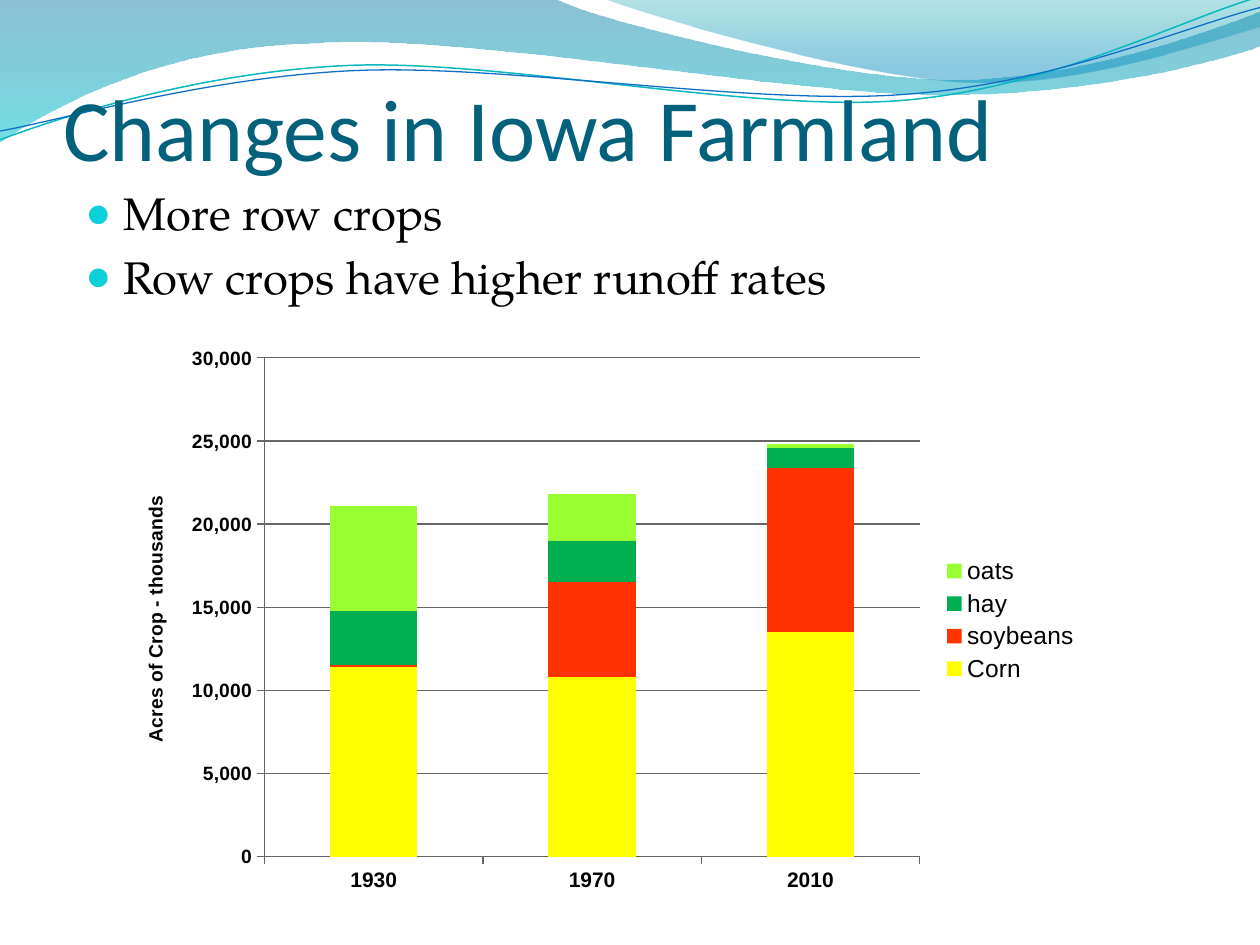
from dataclasses import dataclass

from lxml.etree import SubElement
from pptx import Presentation
from pptx.chart.data import CategoryChartData
from pptx.dml.color import RGBColor
from pptx.enum.chart import XL_CHART_TYPE, XL_LEGEND_POSITION, XL_TICK_MARK
from pptx.enum.text import MSO_ANCHOR
from pptx.oxml import parse_xml
from pptx.oxml.ns import nsdecls, qn
from pptx.util import Inches, Pt

Point = tuple[float, float]


@dataclass(frozen=True)
class Theme:
    title: str = "04617B"
    text: str = "000000"
    bullet: str = "0BD0D9"
    axis: str = "666666"
    head: str = "Calibri"
    body: str = "TeX Gyre Pagella"
    plot: str = "Arial"
    title_size: float = 50
    body_size: float = 26
    key_size: float = 14
    cat_size: float = 12
    val_size: float = 11
    base_size: float = 10


@dataclass(frozen=True)
class Stop:
    pos: float
    color: str
    alpha: int


@dataclass(frozen=True)
class Wave:
    """Start point, then curves (six numbers) and straight lines (two)."""
    start: Point
    steps: list[tuple[float, ...]]
    stops: tuple[Stop, ...] = ()
    line: str = ""
    width: float = 0


@dataclass(frozen=True)
class Crop:
    name: str
    color: str
    acres: tuple[int, ...]


@dataclass(frozen=True)
class Box:
    left: float
    top: float
    wide: float
    high: float


THEME = Theme()
CHART = Box(0.92, 2.67, 7.75, 4.5)
PLOT = Box(1.18, 0.17, 5.2, 3.96)
YEARS = ("1930", "1970", "2010")
CROPS = [
    Crop("Corn", "FFFF00", (11400, 10800, 13500)),
    Crop("soybeans", "FF3300", (100, 5700, 9900)),
    Crop("hay", "00B050", (3300, 2500, 1200)),
    Crop("oats", "99FF33", (6300, 2800, 200)),
]
WAVES = [
    Wave((0, 0), [(4.4, -0.01), (4.76, 0.17, 6.64, 0.63, 7.58, 0.63),
                  (8.53, 0.63, 9.58, 0.26, 10, 0.09), (10.01, 0.36),
                  (9.83, 0.44, 8.7, 0.76, 7.46, 0.75),
                  (6.22, 0.75, 3.82, 0.28, 2.57, 0.34),
                  (1.29, 0.36, 0.46, 0.83, -0.01, 1.13), (0, 0)],
         (Stop(0, "0074A1", 45), Stop(1, "00C6CF", 55))),
    Wave((4.79, -0.01), [(5.09, 0.11, 6.82, 0.62, 7.69, 0.65),
                         (8.56, 0.69, 9.61, 0.32, 10, 0.21), (10, 0),
                         (4.79, -0.01)],
         (Stop(0, "00A1A9", 30), Stop(0.8, "008BBF", 45))),
    Wave((0, 1.11), [(0.48, 0.93, 1.58, 0.57, 2.77, 0.52),
                     (3.95, 0.47, 5.93, 0.89, 7.13, 0.8),
                     (8.33, 0.71, 9.38, 0.15, 9.98, -0.02)],
         line="0AB8BF", width=0.85),
    Wave((0, 1.04), [(0.47, 0.96, 1.64, 0.61, 2.83, 0.56),
                     (4.03, 0.51, 5.97, 0.84, 7.17, 0.75),
                     (8.36, 0.67, 9.41, 0.21, 10, 0.06)],
         line="0F6FC6", width=0.75),
]


def rgb(code: str) -> RGBColor:
    return RGBColor.from_string(code)


def bend(shape, steps: list[tuple[float, ...]]) -> None:
    """Make a curve of each straight edge whose step has control points."""
    edges = list(shape.element.spPr.iter(qn("a:lnTo")))
    for edge, step in zip(edges, steps):
        if len(step) == 2:
            continue
        edge.tag = qn("a:cubicBezTo")
        for old in list(edge):
            edge.remove(old)
        for x, y in zip(step[::2], step[1::2]):
            SubElement(edge, qn("a:pt"), x=str(Inches(x) - shape.left),
                       y=str(Inches(y) - shape.top))


def draw_wave(slide, wave: Wave) -> None:
    pen = slide.shapes.build_freeform(*map(Inches, wave.start))
    ends = [tuple(map(Inches, step[-2:])) for step in wave.steps]
    pen.add_line_segments(ends, close=bool(wave.stops))
    shape = pen.convert_to_shape()
    bend(shape, wave.steps)
    shape.shadow.inherit = False
    if not wave.stops:
        shape.fill.background()
        shape.line.color.rgb = rgb(wave.line)
        shape.line.width = Pt(wave.width)
        return
    shape.line.fill.background()
    shape.fill.gradient()
    shape.fill.gradient_angle = 270
    for stop, want in zip(shape.fill.gradient_stops, wave.stops):
        stop.position = want.pos
        stop.color.rgb = rgb(want.color)
    tints = shape.element.spPr.find(qn("a:gradFill")).iter(qn("a:srgbClr"))
    for tint, want in zip(tints, wave.stops):
        SubElement(tint, qn("a:alpha"), val=str(want.alpha * 1000))


def style(font, face: str, size: float, color: str = THEME.text, bold: bool = False) -> None:
    font.name = face
    font.size = Pt(size)
    font.color.rgb = rgb(color)
    font.bold = bold


def add_title(slide, text: str) -> None:
    box = slide.shapes.add_textbox(Inches(0.5), Inches(0.17), Inches(9.08), Inches(1.25))
    frame = box.text_frame
    frame.word_wrap = True
    frame.vertical_anchor = MSO_ANCHOR.BOTTOM
    frame.margin_left = frame.margin_right = frame.margin_bottom = 0
    run = frame.paragraphs[0].add_run()
    run.text = text
    style(run.font, THEME.head, THEME.title_size, THEME.title)


def add_list(slide, lines: list[str]) -> None:
    box = slide.shapes.add_textbox(Inches(0.58), Inches(1.42), Inches(9), Inches(4.8))
    frame = box.text_frame
    frame.word_wrap = True
    for i, text in enumerate(lines):
        para = frame.add_paragraph() if i else frame.paragraphs[0]
        para.space_before = Pt(0.2 * THEME.body_size)
        props = para._p.get_or_add_pPr()
        props.set("marL", str(Inches(0.3)))
        props.set("indent", str(Inches(-0.3)))
        tint = SubElement(props, qn("a:buClr"))
        SubElement(tint, qn("a:srgbClr"), val=THEME.bullet)
        SubElement(props, qn("a:buSzPct"), val="95000")
        SubElement(props, qn("a:buFont"), typeface=THEME.plot)
        SubElement(props, qn("a:buChar"), char="●")
        run = para.add_run()
        run.text = text
        style(run.font, THEME.body, THEME.body_size)


def place_plot(plot) -> None:
    """Fix the inner plot area inside the chart."""
    area = plot._element.getparent()
    for old in area.findall(qn("c:layout")):
        area.remove(old)
    spots = (("layoutTarget", "inner"), ("xMode", "edge"), ("yMode", "edge"),
             ("x", PLOT.left / CHART.wide), ("y", PLOT.top / CHART.high),
             ("w", PLOT.wide / CHART.wide), ("h", PLOT.high / CHART.high))
    marks = "".join(f'<c:{tag} val="{spot}"/>' for tag, spot in spots)
    area.insert(0, parse_xml(f'<c:layout {nsdecls("c")}><c:manualLayout>{marks}'
                             "</c:manualLayout></c:layout>"))


def add_crops(slide) -> None:
    data = CategoryChartData(number_format="#,##0")
    data.categories = YEARS
    for crop in CROPS:
        data.add_series(crop.name, crop.acres)
    chart = slide.shapes.add_chart(
        XL_CHART_TYPE.COLUMN_STACKED, Inches(CHART.left), Inches(CHART.top),
        Inches(CHART.wide), Inches(CHART.high), data).chart
    style(chart.font, THEME.body, THEME.base_size)
    chart.has_title = False
    plot = chart.plots[0]
    plot.vary_by_categories = False
    plot.overlap = 100
    plot.gap_width = 150
    for bar, crop in zip(plot.series, CROPS):
        bar.format.fill.solid()
        bar.format.fill.fore_color.rgb = rgb(crop.color)
    place_plot(plot)

    cat, val = chart.category_axis, chart.value_axis
    val.minimum_scale, val.maximum_scale, val.major_unit = 0, 30000, 5000
    val.has_major_gridlines = True
    for axis, size in ((cat, THEME.cat_size), (val, THEME.val_size)):
        axis.major_tick_mark = XL_TICK_MARK.OUTSIDE
        style(axis.tick_labels.font, THEME.plot, size, bold=True)
    for part in (cat, val, val.major_gridlines):
        part.format.line.color.rgb = rgb(THEME.axis)
        part.format.line.width = Pt(0.75)
    val.tick_labels.number_format = "#,##0"
    val.tick_labels.number_format_is_linked = False
    run = val.axis_title.text_frame.paragraphs[0].add_run()
    run.text = "Acres of Crop - thousands"
    style(run.font, THEME.plot, THEME.val_size, bold=True)

    chart.has_legend = True
    chart.legend.position = XL_LEGEND_POSITION.RIGHT
    chart.legend.include_in_layout = False
    style(chart.legend.font, THEME.plot, THEME.key_size)


def main() -> None:
    deck = Presentation()
    deck.slide_width, deck.slide_height = Inches(10), Inches(7.5)
    slide = deck.slides.add_slide(deck.slide_layouts[6])
    for wave in WAVES:
        draw_wave(slide, wave)
    add_title(slide, "Changes in Iowa Farmland")
    add_crops(slide)
    add_list(slide, ["More row crops", "Row crops have higher runoff rates"])
    deck.save("out.pptx")


if __name__ == "__main__":
    main()
